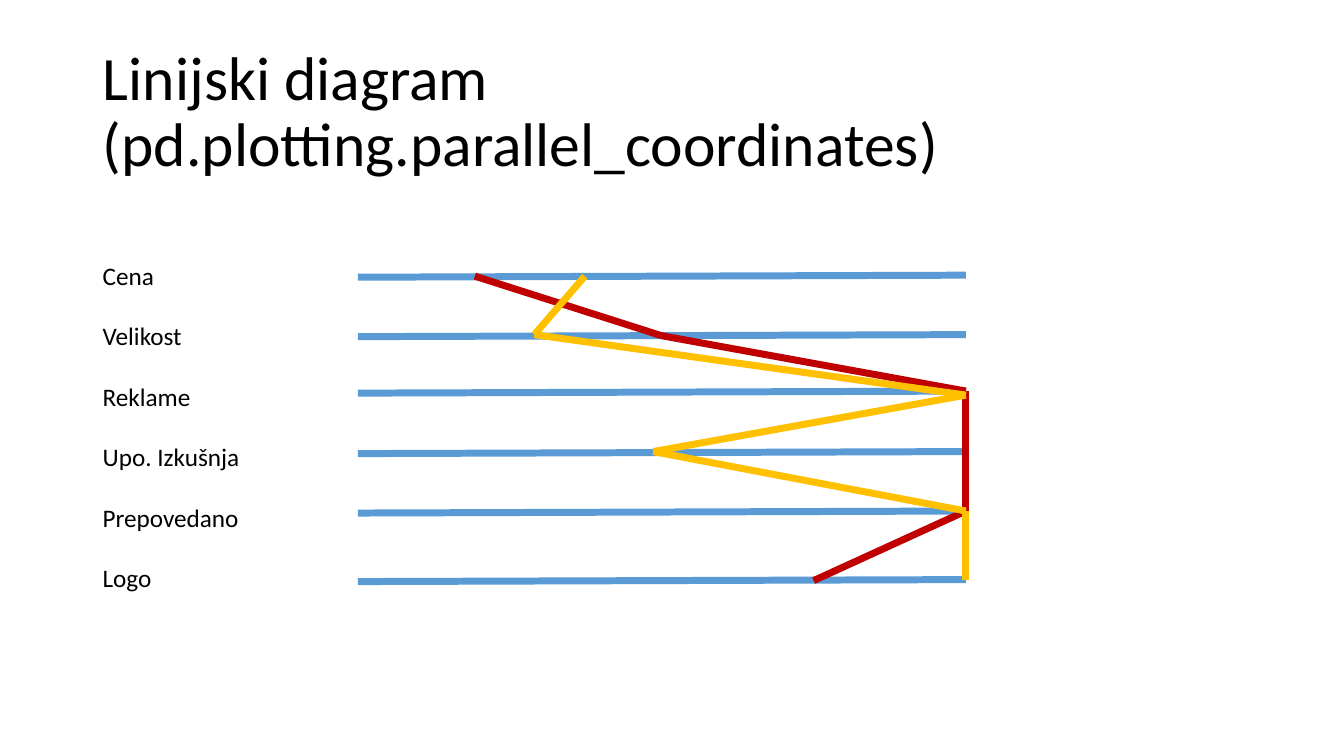
from dataclasses import dataclass
from itertools import pairwise

from lxml.etree import SubElement
from pptx import Presentation
from pptx.dml.color import RGBColor
from pptx.enum.shapes import MSO_CONNECTOR as Connector
from pptx.enum.text import MSO_ANCHOR as Anchor, MSO_AUTO_SIZE as AutoSize, PP_ALIGN as Align
from pptx.oxml.ns import qn
from pptx.slide import Slide
from pptx.text.text import _Paragraph as Paragraph
from pptx.util import Inches, Pt

Point = tuple[float, float]

FONT = "Calibri"
BLACK = "000000"
AXIS_COLOUR = "5B9BD5"
AXIS_LEFT, AXIS_RIGHT = 3.55, 9.58
AXIS_TILT = 0.02
LINE_WIDTH = 5


@dataclass
class Axis:
    label: str
    top: float


@dataclass
class Profile:
    colour: str
    points: list[Point]


AXES = [
    Axis("Cena", 2.73),
    Axis("Velikost", 3.32),
    Axis("Reklame", 3.88),
    Axis("Upo. Izkušnja", 4.48),
    Axis("Prepovedano", 5.07),
    Axis("Logo", 5.75),
]

PROFILES = [
    Profile("C00000", [(4.71, 2.74), (6.56, 3.33), (AXIS_RIGHT, 3.88),
                       (AXIS_RIGHT, 5.07), (8.07, 5.76)]),
    Profile("FFC000", [(5.8, 2.74), (5.3, 3.32), (AXIS_RIGHT, 3.92),
                       (6.48, 4.48), (AXIS_RIGHT, 5.07), (AXIS_RIGHT, 5.75)]),
]


def colour(value: str) -> RGBColor:
    return RGBColor.from_string(value)


def format_runs(para: Paragraph, size: float) -> None:
    para.alignment = Align.LEFT
    for run in para.runs:
        run.font.name = FONT
        run.font.size = Pt(size)
        run.font.color.rgb = colour(BLACK)


def add_title(page: Slide) -> None:
    title = page.shapes.title
    title.left, title.top = Inches(0.92), Inches(0.4)
    title.width, title.height = Inches(11.5), Inches(1.45)
    frame = title.text_frame
    frame.text = "Linijski diagram\v(pd.plotting.parallel_coordinates)"
    frame.word_wrap = True
    frame.auto_size = AutoSize.NONE
    frame.vertical_anchor = Anchor.MIDDLE
    para = frame.paragraphs[0]
    para.line_spacing = 0.9
    format_runs(para, 44)


def add_labels(page: Slide) -> None:
    box = page.shapes.add_textbox(Inches(0.92), Inches(2.53), Inches(1.57), Inches(4.04))
    frame = box.text_frame
    frame.text = "\n".join(axis.label for axis in AXES)
    frame.word_wrap = False
    for index, para in enumerate(frame.paragraphs):
        format_runs(para, 18)
        para.space_before = Pt(21.6 if index else 0)


def add_line(page: Slide, start: Point, end: Point, line_colour: str) -> None:
    line = page.shapes.add_connector(
        Connector.STRAIGHT, *(Inches(value) for value in start + end))
    line.line.color.rgb = colour(line_colour)
    line.line.width = Pt(LINE_WIDTH)
    SubElement(line._element.spPr, qn("a:effectLst"))


def main() -> None:
    deck = Presentation()
    deck.slide_width, deck.slide_height = Inches(13.33), Inches(7.5)
    page = deck.slides.add_slide(deck.slide_layouts.get_by_name("Title Only"))
    add_title(page)
    add_labels(page)
    for axis in AXES:
        add_line(page, (AXIS_RIGHT, axis.top), (AXIS_LEFT, axis.top + AXIS_TILT), AXIS_COLOUR)
    for profile in PROFILES:
        for start, end in pairwise(profile.points):
            add_line(page, start, end, profile.colour)
    deck.save("out.pptx")


if __name__ == "__main__":
    main()
